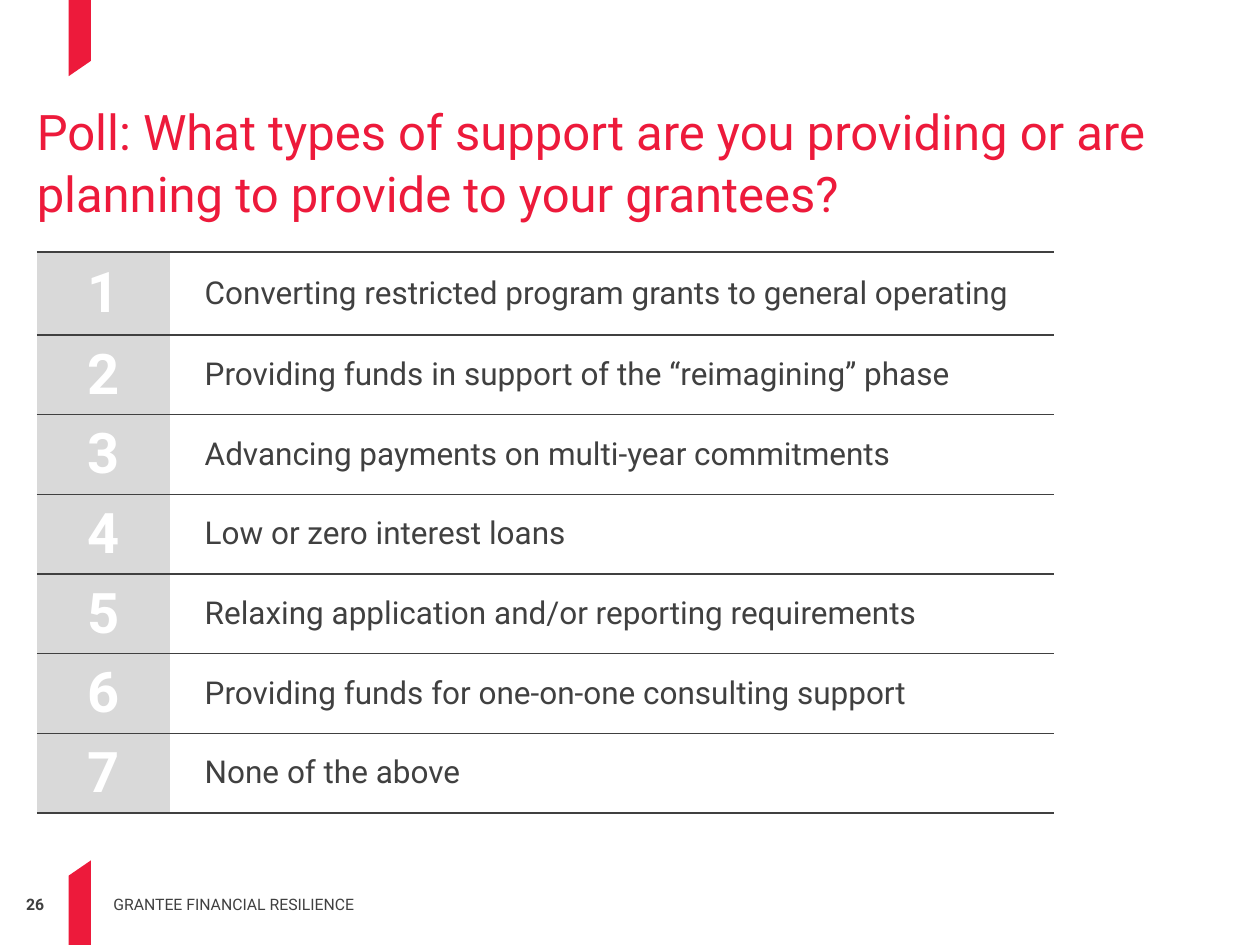
import pptx
import pptx.dml.color
import pptx.enum.text
import pptx.oxml
import pptx.oxml.ns
import pptx.util

Pt = pptx.util.Pt
ALIGN = pptx.enum.text.PP_ALIGN
ANCHOR = pptx.enum.text.MSO_ANCHOR

RED, DARK, GREY, WHITE = "ED1A3B", "404040", "D9D9D9", "FFFFFF"


def paint(color, value):
    color.rgb = pptx.dml.color.RGBColor.from_string(value)


def write(frame, text, size=18, color=DARK, bold=False, align=ALIGN.LEFT,
          space=None):
    """Put one formatted paragraph in a text frame."""
    para = frame.paragraphs[0]
    para.text = text
    para.alignment = align
    if space:
        para.line_spacing = space
    font = para.runs[0].font
    font.name, font.size, font.bold = "Roboto", Pt(size), bold
    paint(font.color, color)


def rule(cell, side, color=None):
    """Give one side of a cell a line, or no line without a colour."""
    fill = (f'<a:solidFill><a:srgbClr val="{color}"/></a:solidFill>'
            if color else "<a:noFill/>")
    line = pptx.oxml.parse_xml(
        f'<a:ln{side} {pptx.oxml.ns.nsdecls("a")} w="{Pt(1)}">{fill}</a:ln{side}>')
    cell._tc.get_or_add_tcPr().append(line)


class Deck:
    def __init__(self):
        self.prs = pptx.Presentation()
        self.prs.slide_width, self.prs.slide_height = Pt(720), Pt(540)
        self.slide = self.prs.slides.add_slide(self.prs.slide_layouts[5])
        self.shapes = self.slide.shapes

    def frame(self, shape, anchor):
        frame = shape.text_frame
        frame.word_wrap = True
        frame.auto_size = pptx.enum.text.MSO_AUTO_SIZE.NONE
        frame.vertical_anchor = anchor
        frame.margin_left = frame.margin_right = 0
        frame.margin_top = frame.margin_bottom = 0
        return frame

    def title(self, text, left, top, width, height):
        shape = self.shapes.title
        shape.left, shape.top = Pt(left), Pt(top)
        shape.width, shape.height = Pt(width), Pt(height)
        write(self.frame(shape, ANCHOR.MIDDLE), text, size=28, color=RED,
              space=1.05)

    def text(self, text, left, top, width, height, anchor=ANCHOR.TOP, **style):
        box = self.shapes.add_textbox(Pt(left), Pt(top), Pt(width), Pt(height))
        write(self.frame(box, anchor), text, **style)

    def band(self, points):
        start, *rest = [(Pt(x), Pt(y)) for x, y in points]
        build = self.shapes.build_freeform(*start)
        build.add_line_segments(rest, close=True)
        shape = build.convert_to_shape()
        shape.shadow.inherit = False
        shape.fill.solid()
        paint(shape.fill.fore_color, RED)
        shape.line.fill.background()

    def cell(self, cell, text, inset, fill=None, **style):
        cell.margin_left, cell.margin_right = Pt(inset), Pt(10)
        cell.margin_top = cell.margin_bottom = Pt(3.6)
        cell.vertical_anchor = ANCHOR.MIDDLE
        for side, color in (("L", None), ("R", None), ("T", DARK), ("B", DARK)):
            rule(cell, side, color)
        if fill:
            cell.fill.solid()
            paint(cell.fill.fore_color, fill)
        else:
            cell.fill.background()
        write(cell.text_frame, text, **style)

    def table(self, items, left, top, widths, first, step):
        count = len(items)
        height = first + step * (count - 1)
        table = self.shapes.add_table(count, 2, Pt(left), Pt(top),
                                      Pt(sum(widths)), Pt(height)).table
        table.first_row = table.horz_banding = False
        for col, width in zip(table.columns, widths):
            col.width = Pt(width)
        for num, item in enumerate(items):
            table.rows[num].height = Pt(step if num else first)
            self.cell(table.cell(num, 0), str(num + 1), 10, fill=GREY, size=32,
                      color=WHITE, bold=True, align=ALIGN.CENTER)
            self.cell(table.cell(num, 1), item, 20)


def main():
    deck = Deck()

    # Red bands at the top and bottom edges
    deck.band([(52, 34.8), (52, 0), (39.2, 0), (39.2, 43.6)])
    deck.band([(39.2, 500.4), (39.2, 540), (52, 540), (52, 491.6)])

    # Title
    deck.title("Poll: What types of support are you providing or are planning "
               "to provide to your grantees?", 21, 54, 678, 75.6)

    # Poll choices
    deck.table([
        "Converting restricted program grants to general operating",
        "Providing funds in support of the “reimagining” phase",
        "Advancing payments on multi-year commitments",
        "Low or zero interest loans",
        "Relaxing application and/or reporting requirements",
        "Providing funds for one-on-one consulting support",
        "None of the above",
    ], left=21, top=144, widths=(76, 505.5), first=47.4, step=45.55)

    # Page number and footer
    deck.text("26", 0, 511.2, 25.2, 10.8, size=9, bold=True, align=ALIGN.RIGHT)
    deck.text("GRANTEE FINANCIAL RESILIENCE", 64.8, 500.4, 250, 21.6,
              anchor=ANCHOR.BOTTOM, size=9)

    deck.prs.save("out.pptx")


if __name__ == "__main__":
    main()
